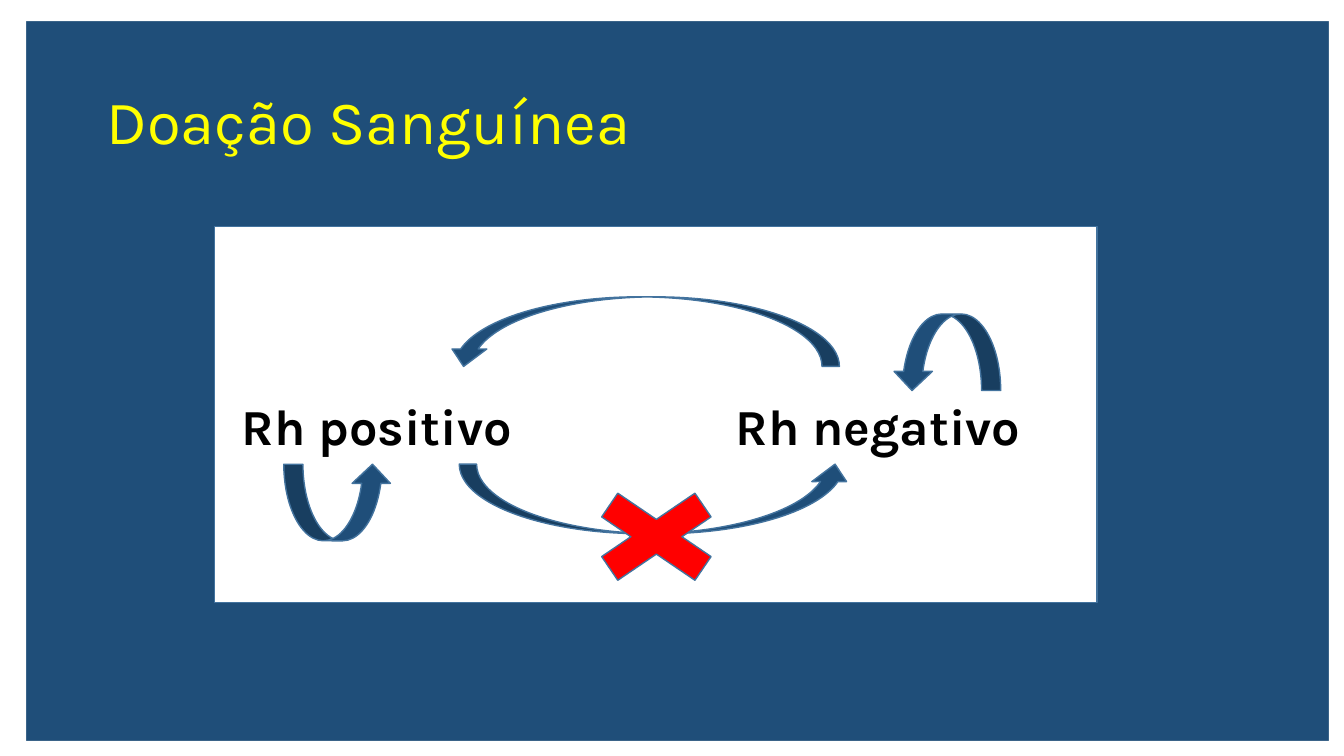
from pptx import Presentation
from pptx.dml.color import RGBColor
from pptx.enum.shapes import MSO_SHAPE
from pptx.enum.text import MSO_ANCHOR
from pptx.util import Inches, Pt

NAVY = RGBColor(0x1F, 0x4E, 0x79)
STEEL = RGBColor(0x43, 0x73, 0x9E)
WHITE = RGBColor(0xFF, 0xFF, 0xFF)
BLACK = RGBColor(0, 0, 0)
YELLOW = RGBColor(0xFF, 0xFF, 0)
RED = RGBColor(0xFF, 0, 0)

WIDTH, HEIGHT = 13.33, 7.5
FRAME = [
    (0, 0, WIDTH, 0.21),
    (0, 0, 0.26, HEIGHT),
    (0, 7.35, WIDTH, 0.15),
    (13.18, 0, 0.15, HEIGHT),
]
LABELS = [("Rh positivo", 2.3, 3), ("Rh negativo", 7.2, 3.31)]
DONATIONS = [
    (6.03, 1.34, 0.69, 3.9, 90),
    (6.16, 3, 0.69, 3.9, 270),
    (9.01, 2.96, 0.76, 1.07, 90),
    (2.97, 4.45, 0.76, 1.07, 270),
]


def add_shape(s, kind, box, fill, line=None, rotation=0):
    """Add a flat preset shape, outlined when a line colour is given."""
    sp = s.shapes.add_shape(kind, *map(Inches, box))
    sp.shadow.inherit = False
    sp.rotation = rotation
    sp.fill.solid()
    sp.fill.fore_color.rgb = fill
    if line is None:
        sp.line.fill.background()
    else:
        sp.line.color.rgb = line
        sp.line.width = Pt(1)
    return sp


def add_text(s, text, box, size, color, bold=False):
    """Add a one-paragraph text box and return it."""
    sp = s.shapes.add_textbox(*map(Inches, box))
    tf = sp.text_frame
    tf.word_wrap = True
    p = tf.paragraphs[0]
    p.text = text
    p.font.name = "Karla"
    p.font.size = Pt(size)
    p.font.bold = bold
    p.font.color.rgb = color
    return sp


def add_title(s, text):
    """Add the slide title, centred vertically in its box."""
    tf = add_text(s, text, (0.96, 0.51, 11.5, 1.45), 44, YELLOW).text_frame
    tf.vertical_anchor = MSO_ANCHOR.MIDDLE
    tf.paragraphs[0].line_spacing = 0.9


def add_label(s, text, left, width):
    """Add a blood group label on white."""
    sp = add_text(s, text, (left, 3.87, width, 0.71), 36, BLACK, True)
    sp.fill.solid()
    sp.fill.fore_color.rgb = WHITE


def main():
    """Build the blood donation slide."""
    prs = Presentation()
    prs.slide_width, prs.slide_height = Inches(WIDTH), Inches(HEIGHT)
    s = prs.slides.add_slide(prs.slide_layouts[6])
    s.background.fill.solid()
    s.background.fill.fore_color.rgb = NAVY
    for box in FRAME:
        add_shape(s, MSO_SHAPE.RECTANGLE, box, WHITE)
    add_title(s, "Doação Sanguínea")
    add_shape(s, MSO_SHAPE.RECTANGLE, (2.13, 2.25, 8.75, 3.73), WHITE, STEEL)
    for label in LABELS:
        add_label(s, *label)
    for *box, rotation in DONATIONS:
        add_shape(s, MSO_SHAPE.CURVED_RIGHT_ARROW, box, NAVY, STEEL, rotation)
    add_shape(s, MSO_SHAPE.MATH_MULTIPLY, (5.62, 4.72, 1.78, 1.21), RED, STEEL)
    prs.save("out.pptx")


if __name__ == "__main__":
    main()
